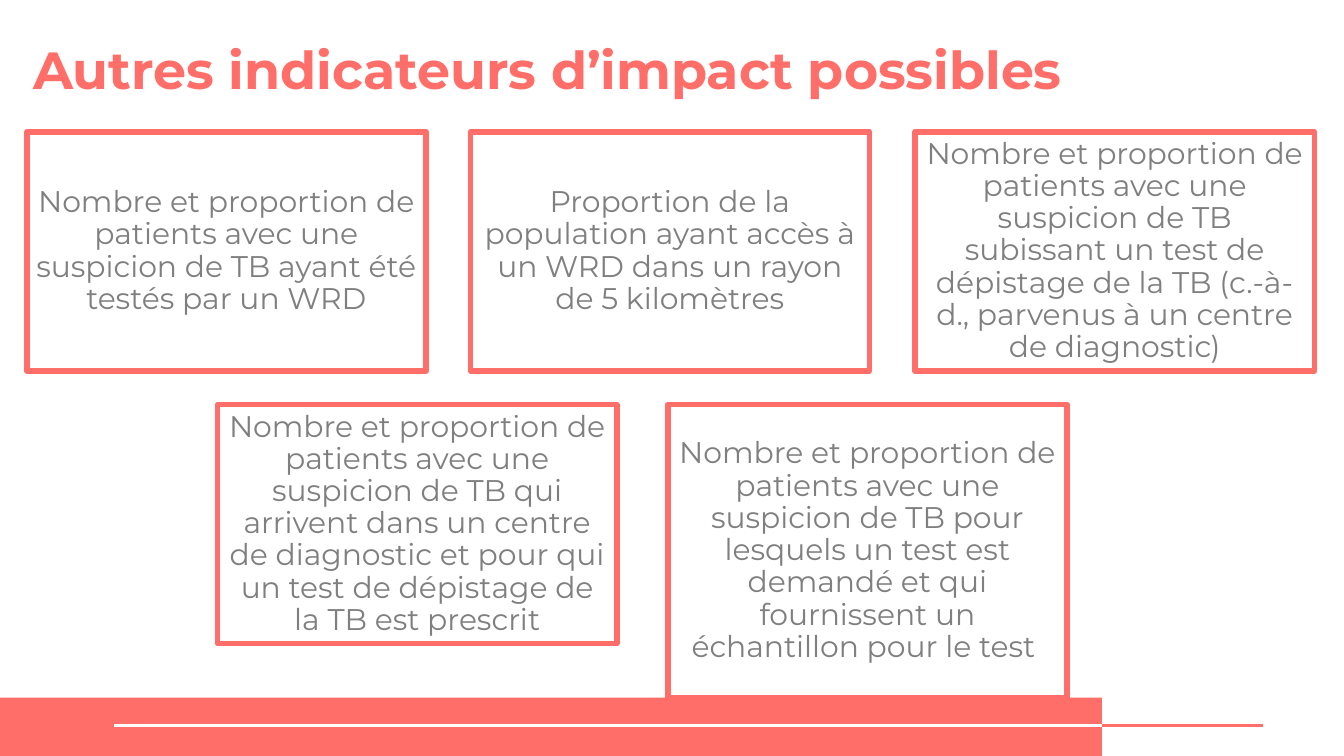
from lxml import etree
from pptx import Presentation
from pptx.dml.color import RGBColor
from pptx.enum import shapes, text
from pptx.oxml import ns
from pptx.util import Inches, Pt

CORAL = RGBColor(0xFF, 0x6E, 0x68)
WHITE = RGBColor(0xFF, 0xFF, 0xFF)
GREY = RGBColor(0x7F, 0x7F, 0x7F)

SLIDE_WIDTH = Inches(10)
SLIDE_HEIGHT = SLIDE_WIDTH * 9 // 16

TITLE = "Autres indicateurs d’impact possibles"
BOX_WIDTH, BOX_HEIGHT = 2.97, 1.78
# Each row: top, then (left, height, text) for each box
ROWS = [
    (0.98, [
        (0.2, BOX_HEIGHT,
         "Nombre et proportion de patients avec une suspicion de TB ayant été "
         "testés par un WRD"),
        (3.5, BOX_HEIGHT,
         "Proportion de la population ayant accès à un WRD dans un rayon de "
         "5 kilomètres"),
        (6.81, BOX_HEIGHT,
         "Nombre et proportion de patients avec une suspicion de TB subissant "
         "un test de dépistage de la TB (c.-à-d., parvenus à un centre de "
         "diagnostic)"),
    ]),
    (3.01, [
        (1.62, BOX_HEIGHT,
         "Nombre et proportion de patients avec une suspicion de TB qui "
         "arrivent dans un centre de diagnostic et pour qui un test de "
         "dépistage de la TB est prescrit"),
        (4.97, 2.18,
         "Nombre et proportion de patients avec une suspicion de TB pour "
         "lesquels un test est demandé et qui fournissent un échantillon "
         "pour le test "),
    ]),
]
FOOTER_TOP = 5.19
FOOTER_LINES = [(8.26, 0.85, WHITE), (9.4, 8.2, CORAL)]
FOOTER_LINE_TOP = 5.4

TITLE_FONT = {"name": "Montserrat", "size": Pt(28), "bold": True}
BOX_FONT = {"name": "Montserrat", "size": Pt(16), "bold": False}


def set_attributes(target, values):
    for name, value in values.items():
        setattr(target, name, value)


def write_text(shape, content, font, color, inset, anchor, alignment, spacing):
    frame = shape.text_frame
    margins = {f"margin_{side}": Inches(inset)
               for side in ("left", "top", "right", "bottom")}
    set_attributes(frame, {"word_wrap": True, "vertical_anchor": anchor, **margins})
    paragraph = frame.paragraphs[0]
    set_attributes(paragraph, {"alignment": alignment, "line_spacing": spacing})
    run = paragraph.add_run()
    run.text = content
    set_attributes(run.font, font)
    run.font.color.rgb = color


def add_rectangle(slide, left, top, width, height, fill):
    shape = slide.shapes.add_shape(
        shapes.MSO_SHAPE.RECTANGLE,
        Inches(left), Inches(top), Inches(width), Inches(height))
    shape.shadow.inherit = False
    shape.fill.solid()
    shape.fill.fore_color.rgb = fill
    shape.line.fill.background()
    return shape


def add_footer(slide):
    bar = add_rectangle(slide, 0, FOOTER_TOP, 8.2, 0.43, CORAL)
    bar.height = SLIDE_HEIGHT - bar.top
    for start, end, color in FOOTER_LINES:
        line = slide.shapes.add_connector(
            shapes.MSO_CONNECTOR.STRAIGHT, Inches(start), Inches(FOOTER_LINE_TOP),
            Inches(end), Inches(FOOTER_LINE_TOP))
        line.line.color.rgb = color
        line.line.width = Pt(1.5)
        etree.SubElement(line._element.spPr, ns.qn("a:effectLst"))


def add_indicator(slide, left, top, height, content):
    box = add_rectangle(slide, left, top, BOX_WIDTH, height, WHITE)
    box.line.color.rgb = CORAL
    box.line.width = Pt(3)
    etree.SubElement(box.line._get_or_add_ln(), ns.qn("a:round"))
    write_text(box, content, BOX_FONT, GREY, 0.06,
               text.MSO_ANCHOR.MIDDLE, text.PP_ALIGN.CENTER, 0.9)


def main():
    presentation = Presentation()
    presentation.slide_width = SLIDE_WIDTH
    presentation.slide_height = SLIDE_HEIGHT
    slide = presentation.slides.add_slide(presentation.slide_layouts[6])

    add_footer(slide)
    title = slide.shapes.add_textbox(
        Inches(0.15), Inches(0.18), Inches(8.75), Inches(0.55))
    write_text(title, TITLE, TITLE_FONT, CORAL, 0.1,
               text.MSO_ANCHOR.TOP, text.PP_ALIGN.LEFT, 1.0)
    for top, boxes in ROWS:
        for left, height, content in boxes:
            add_indicator(slide, left, top, height, content)

    presentation.save("out.pptx")


if __name__ == "__main__":
    main()
